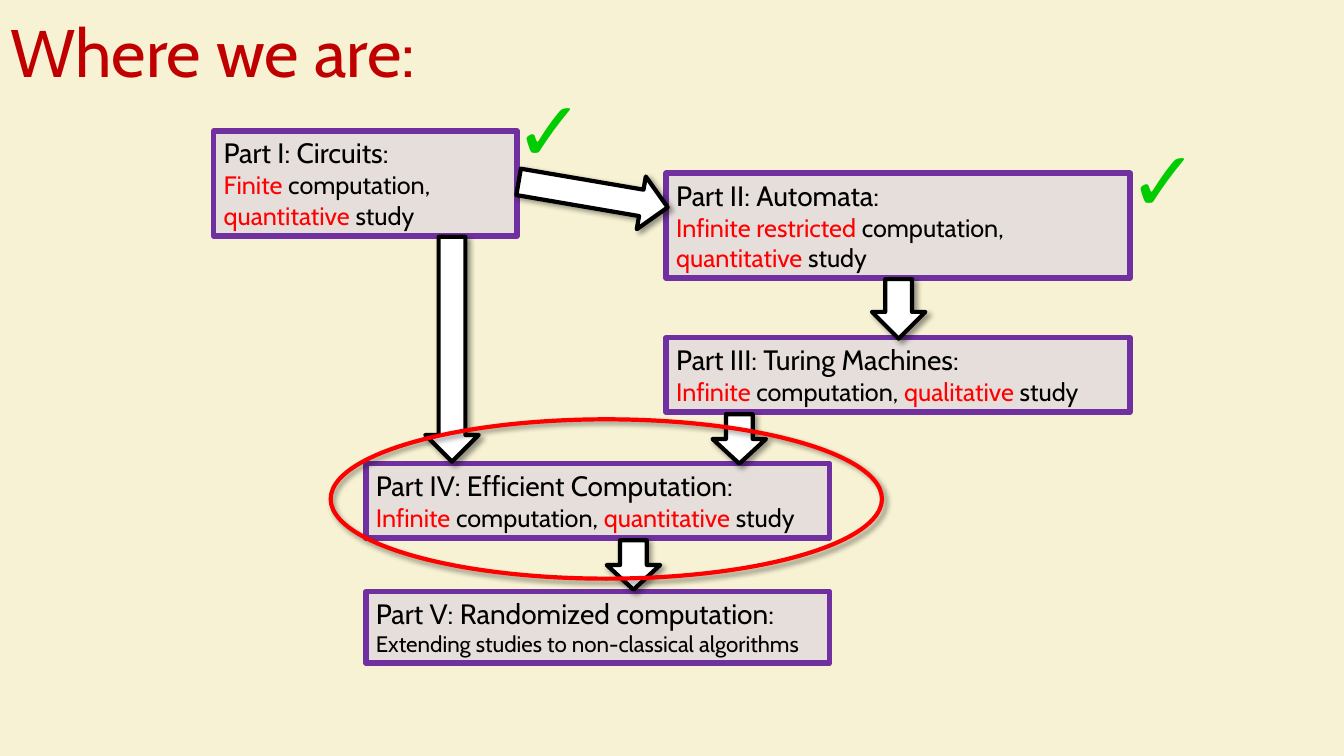
from dataclasses import dataclass

from lxml import etree
from pptx import Presentation
from pptx.dml.color import RGBColor
from pptx.enum.shapes import MSO_SHAPE as Shape
from pptx.enum.text import MSO_ANCHOR as Anchor, MSO_AUTO_SIZE as AutoSize, PP_ALIGN as Align
from pptx.oxml.ns import qn
from pptx.util import Pt

FONT = "Cabin"
CREAM = RGBColor(0xF7, 0xF2, 0xD3)
TITLE_RED = RGBColor(0xC0, 0x00, 0x00)
RED = RGBColor(0xFF, 0x00, 0x00)
GREEN = RGBColor(0x00, 0xCC, 0x00)
PURPLE = RGBColor(0x70, 0x30, 0xA0)
GREY = RGBColor(0xE5, 0xDE, 0xDB)
BLACK = RGBColor(0x00, 0x00, 0x00)
WHITE = RGBColor(0xFF, 0xFF, 0xFF)

ARROW_W = 38.2
MARK = "|"


@dataclass(frozen=True)
class Part:
    left: float
    top: float
    width: float
    height: float
    heading: str
    details: tuple[str, ...]
    size: float = 18


@dataclass(frozen=True)
class Arrow:
    left: float
    top: float
    length: float
    rotation: float = 0


@dataclass(frozen=True)
class Check:
    left: float
    top: float


PARTS = (
    Part(152.6, 93.6, 216.7, 74.9, "Part I: Circuits:",
         ("|Finite| computation,", "|quantitative| study")),
    Part(475.9, 123.8, 331.2, 74.9, "Part II: Automata:",
         ("|Infinite restricted| computation, |quantitative| study",)),
    Part(475.9, 241.2, 331.2, 53.3, "Part III: Turing Machines:",
         ("|Infinite| computation, |qualitative| study",)),
    Part(261.4, 331.2, 331.2, 53.3, "Part IV: Efficient Computation:",
         ("|Infinite| computation, |quantitative| study",)),
    Part(261.4, 422.6, 331.2, 51.1, "Part V: Randomized computation:",
         ("Extending studies to non-classical algorithms",), 16),
)

ARROWS = (
    Arrow(509, 295.9, 35.3),
    Arrow(433.4, 385.9, 35.3),
    Arrow(404.6, 85, 108, 279.7),
    Arrow(622.8, 199.4, 42.5),
    Arrow(303.8, 169.2, 160.6),
)

CHECKS = (Check(799.2, 87.8), Check(360.7, 51.8))


def add_text(p, text: str, *, size: float, color: RGBColor = BLACK) -> None:
    p.alignment = Align.LEFT
    for i, piece in enumerate(text.split(MARK)):
        if piece:
            r = p.add_run()
            r.text = piece
            r.font.name = FONT
            r.font.size = Pt(size)
            r.font.color.rgb = RED if i % 2 else color


def add_shadow(sp) -> None:
    sp.shadow.inherit = False
    effects = sp._element.spPr.find(qn("a:effectLst"))
    shadow = etree.SubElement(effects, qn("a:outerShdw"), blurRad=str(Pt(4)),
                              dist=str(Pt(3)), dir="2700000", algn="tl", rotWithShape="0")
    color = etree.SubElement(shadow, qn("a:srgbClr"), val=str(BLACK))
    etree.SubElement(color, qn("a:alpha"), val="40000")


def add_outlined(slide, kind: Shape, left: float, top: float, width: float, height: float, *,
                 line: RGBColor, weight: float, fill: RGBColor | None = None):
    sp = slide.shapes.add_shape(kind, Pt(left), Pt(top), Pt(width), Pt(height))
    sp.shadow.inherit = False
    if fill is None:
        sp.fill.background()
    else:
        sp.fill.solid()
        sp.fill.fore_color.rgb = fill
    sp.line.color.rgb = line
    sp.line.width = Pt(weight)
    return sp


def add_title(slide, text: str) -> None:
    sp = slide.shapes.title
    sp.left, sp.top, sp.width, sp.height = Pt(0), Pt(0), Pt(960), Pt(79.9)
    tf = sp.text_frame
    tf.auto_size = AutoSize.NONE
    tf.vertical_anchor = Anchor.MIDDLE
    p = tf.paragraphs[0]
    p.line_spacing = 0.9
    add_text(p, text, size=48, color=TITLE_RED)


def add_part(slide, part: Part) -> None:
    sp = add_outlined(slide, Shape.RECTANGLE, part.left, part.top, part.width, part.height,
                      line=PURPLE, weight=4, fill=GREY)
    tf = sp.text_frame
    tf.word_wrap = True
    tf.auto_size = AutoSize.SHAPE_TO_FIT_TEXT
    tf.vertical_anchor = Anchor.TOP
    add_text(tf.paragraphs[0], part.heading, size=20)
    for detail in part.details:
        add_text(tf.add_paragraph(), detail, size=part.size)


def add_arrow(slide, arrow: Arrow) -> None:
    sp = add_outlined(slide, Shape.DOWN_ARROW, arrow.left, arrow.top, ARROW_W, arrow.length,
                      line=BLACK, weight=3, fill=WHITE)
    sp.rotation = arrow.rotation
    add_shadow(sp)


def add_check(slide, check: Check) -> None:
    sp = slide.shapes.add_textbox(Pt(check.left), Pt(check.top), Pt(61.9), Pt(79.9))
    tf = sp.text_frame
    tf.word_wrap = False
    tf.auto_size = AutoSize.SHAPE_TO_FIT_TEXT
    add_text(tf.paragraphs[0], "✓", size=60, color=GREEN)


def main() -> None:
    prs = Presentation()
    prs.slide_width, prs.slide_height = Pt(960), Pt(540)
    slide = prs.slides.add_slide(prs.slide_layouts[5])
    slide.background.fill.solid()
    slide.background.fill.fore_color.rgb = CREAM

    add_title(slide, "Where we are:")
    for part in PARTS:
        add_part(slide, part)
    for arrow in ARROWS:
        add_arrow(slide, arrow)
    highlight = add_outlined(slide, Shape.OVAL, 236.2, 299.5, 393.8, 113.8, line=RED, weight=3)
    add_shadow(highlight)
    for check in CHECKS:
        add_check(slide, check)

    prs.save("out.pptx")


if __name__ == "__main__":
    main()
